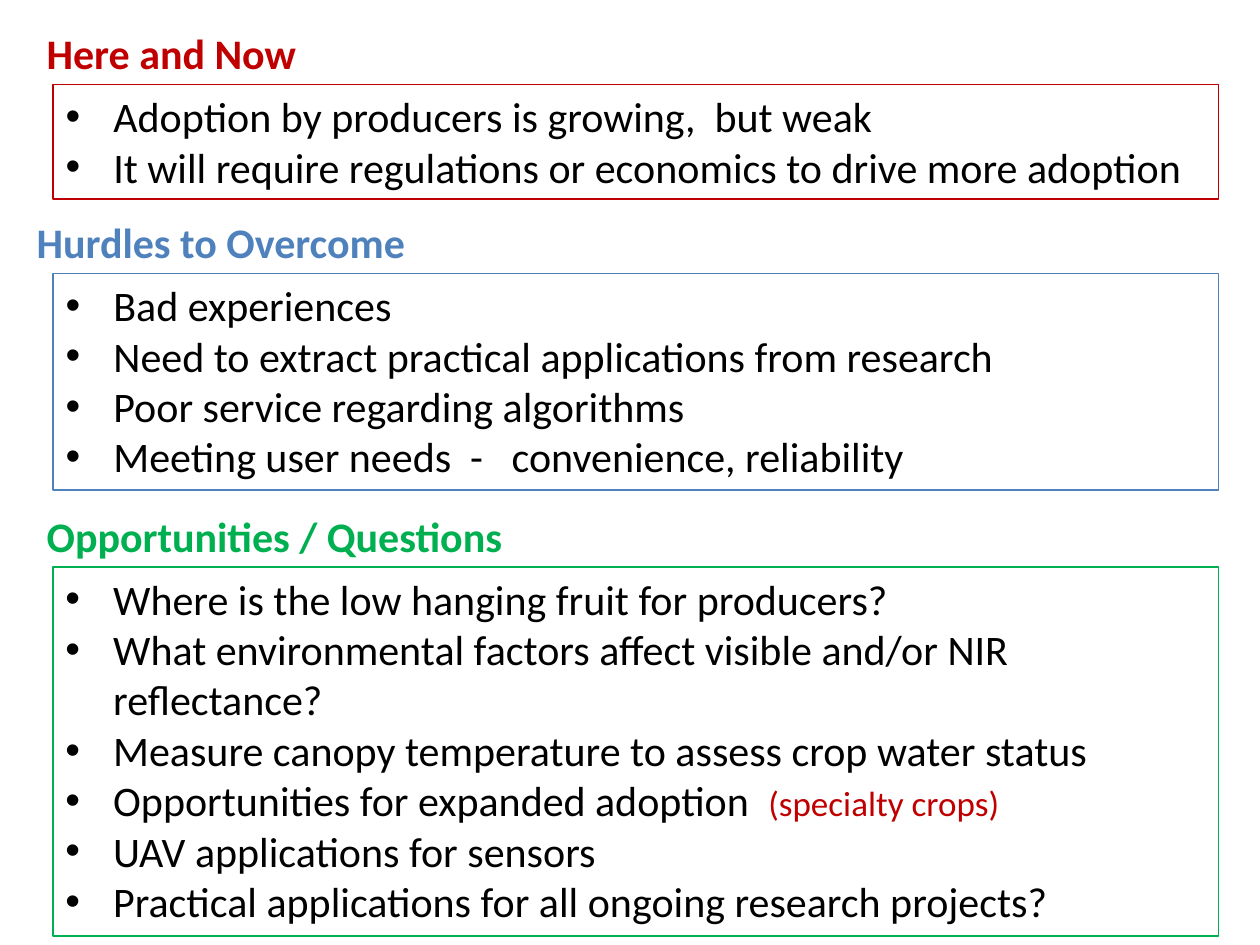
from lxml import etree
from pptx import Presentation
from pptx.dml.color import RGBColor
from pptx.enum.text import MSO_ANCHOR, MSO_AUTO_SIZE, PP_ALIGN
from pptx.oxml.ns import qn
from pptx.util import Inches, Pt

LEFT = PP_ALIGN.LEFT
TOP = MSO_ANCHOR.TOP
NO_AUTOFIT = MSO_AUTO_SIZE.NONE
COMPARISON_LAYOUT = 4

FONT = "Calibri"
RED, BLUE, GREEN, BLACK = "C00000", "4F81BD", "00B050", "000000"
LIST_LEFT, LIST_WIDTH = 0.42, 9.25
HEADING_HEIGHT = 0.5
BULLET_INDENT = 0.38

# Each item is a list of (text, size, colour) runs or plain text.
# Placeholder numbers belong to the layout; None means a text box.
SECTIONS = [
    dict(heading="Here and Now", color=RED, left=0.27, top=0.17, width=2.2,
         list_height=0.91, heading_holder=0, list_holder=2,
         items=["Adoption by producers is growing,  but weak",
                "It will require regulations or economics to drive more adoption"]),
    dict(heading="Hurdles to Overcome", color=BLUE, left=0.19, top=1.67, width=3.15,
         list_height=1.72, heading_holder=1, list_holder=4,
         items=["Bad experiences",
                "Need to extract practical applications from research",
                "Poor service regarding algorithms",
                "Meeting user needs  -   convenience, reliability"]),
    dict(heading="Opportunities / Questions", color=GREEN, left=0.27, top=4, width=3.86,
         list_height=2.93, heading_holder=3, list_holder=None,
         items=["Where is the low hanging fruit for producers?",
                "What environmental factors affect visible and/or NIR reflectance?",
                "Measure canopy temperature to assess crop water status",
                [("Opportunities for expanded adoption  ", 24, BLACK),
                 ("(specialty crops)", 20, RED)],
                "UAV applications for sensors",
                "Practical applications for all ongoing research projects?"]),
]


def rgb(color):
    return RGBColor.from_string(color)


def format_span(span, size, color, bold=False):
    span.font.name = FONT
    span.font.size = Pt(size)
    span.font.bold = bold
    span.font.color.rgb = rgb(color)


def format_para(para):
    para.alignment = LEFT
    para.space_before = para.space_after = Pt(0)
    para.line_spacing = 1.0


def add_bullet(para):
    properties = para._p.get_or_add_pPr()
    properties.set("marL", str(Inches(BULLET_INDENT)))
    properties.set("indent", str(-Inches(BULLET_INDENT)))
    etree.SubElement(properties, qn("a:buFont"), typeface="Arial")
    etree.SubElement(properties, qn("a:buChar"), char="•")


def place_box(page, holder, left, top, width, height, wrap):
    area = [Inches(length) for length in (left, top, width, height)]
    if holder is None:
        box = page.shapes.add_textbox(*area)
    else:
        box = page.placeholders[holder]
        box.left, box.top, box.width, box.height = area
    frame = box.text_frame
    frame.auto_size = NO_AUTOFIT
    frame.vertical_anchor = TOP
    frame.word_wrap = wrap
    return box


def add_heading(page, holder, text, color, left, top, width):
    box = place_box(page, holder, left, top, width, HEADING_HEIGHT, wrap=False)
    box.text_frame.text = text
    para = box.text_frame.paragraphs[0]
    format_para(para)
    format_span(para.runs[0], 24, color, bold=True)


def add_list(page, holder, items, color, top, height):
    box = place_box(page, holder, LIST_LEFT, top, LIST_WIDTH, height, wrap=True)
    box.line.color.rgb = rgb(color)
    box.line.width = Pt(0.75)
    frame = box.text_frame
    for index, item in enumerate(items):
        para = frame.add_paragraph() if index else frame.paragraphs[0]
        format_para(para)
        add_bullet(para)
        spans = [(item, 24, BLACK)] if isinstance(item, str) else item
        for text, size, span_color in spans:
            span = para.add_run()
            span.text = text
            format_span(span, size, span_color)


def add_section(page, section):
    # Coloured heading
    add_heading(page, section["heading_holder"], section["heading"], section["color"],
                section["left"], section["top"], section["width"])
    # Outlined list directly below
    add_list(page, section["list_holder"], section["items"], section["color"],
             section["top"] + HEADING_HEIGHT, section["list_height"])


def main():
    deck = Presentation()
    deck.slide_width, deck.slide_height = Inches(10), Inches(7.5)
    page = deck.slides.add_slide(deck.slide_layouts[COMPARISON_LAYOUT])
    for section in SECTIONS:
        add_section(page, section)
    deck.save("out.pptx")


if __name__ == "__main__":
    main()
